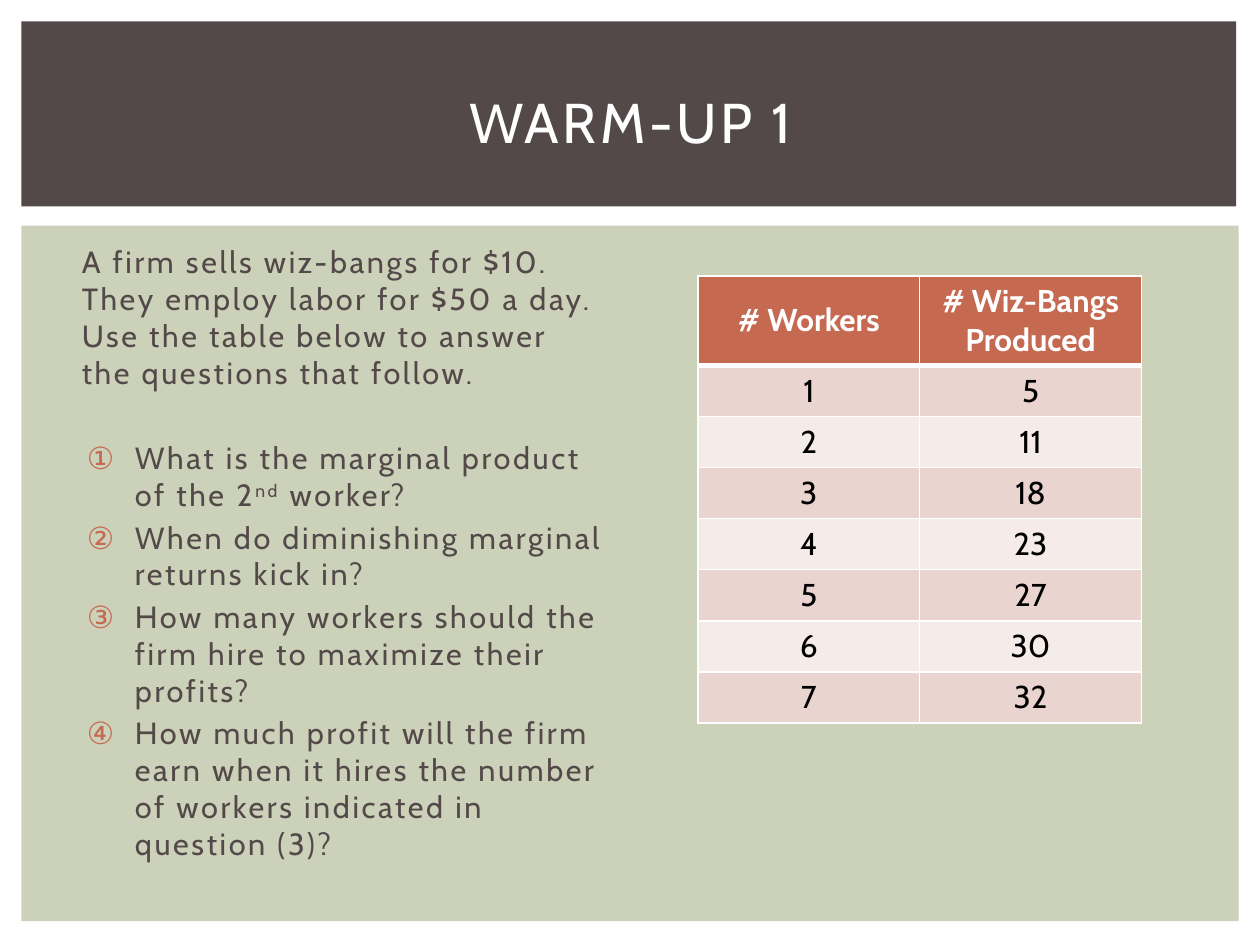
from dataclasses import dataclass

from lxml.etree import SubElement
from pptx import Presentation
from pptx.dml.color import RGBColor
from pptx.enum.shapes import MSO_SHAPE as Preset
from pptx.enum.text import MSO_ANCHOR as Anchor, MSO_AUTO_SIZE as AutoSize, PP_ALIGN as Align
from pptx.oxml import parse_xml
from pptx.oxml.ns import nsdecls, qn
from pptx.util import Cm, Pt

FONT = "Cabin"
BROWN, SAGE, RUST = "534949", "CCD1B9", "C66951"
WHITE, BLACK = "FFFFFF", "000000"
ROW_BANDS = ("EAD4D0", "F5EBE9")


@dataclass(frozen=True)
class Box:
    left: float
    top: float
    width: float
    height: float

    def lengths(self) -> tuple:
        return Cm(self.left), Cm(self.top), Cm(self.width), Cm(self.height)


@dataclass(frozen=True)
class TextStyle:
    size: float
    color: str
    bold: bool = False
    tracking: int = 0


@dataclass(frozen=True)
class Piece:
    text: str
    raised: bool = False


TITLE_STYLE = TextStyle(32, WHITE, tracking=200)
BODY_STYLE = TextStyle(17.5, BROWN, tracking=150)
HEADER_STYLE = TextStyle(18, WHITE, bold=True)
VALUE_STYLE = TextStyle(18, BLACK)

PANELS = (
    (Box(0.43, 4.55, 24.54, 14.02), SAGE),
    (Box(0.43, 0.43, 24.49, 3.73), BROWN),
)
INTRO = (
    "A firm sells wiz-bangs for $10. They employ labor for $50 a day. "
    "Use the table below to answer the questions that follow."
)
QUESTIONS = (
    (Piece("What is the marginal product of the 2"), Piece("nd", raised=True), Piece(" worker?")),
    (Piece("When do diminishing marginal returns kick in?"),),
    (Piece("How many workers should the firm hire to maximize their profits?"),),
    (Piece("How much profit will the firm earn when it hires the number "
           "of workers indicated in question (3)?"),),
)
HEADINGS = ("# Workers", "# Wiz-Bangs Produced")
OUTPUT = (5, 11, 18, 23, 27, 30, 32)


def rgb(color: str) -> RGBColor:
    return RGBColor.from_string(color)


def add_run(paragraph, piece: Piece, style: TextStyle) -> None:
    run = paragraph.add_run()
    run.text = piece.text
    run.font.name = FONT
    run.font.size = Pt(style.size)
    run.font.bold = style.bold
    run.font.color.rgb = rgb(style.color)
    properties = run.font._element
    if style.tracking:
        properties.set("spc", str(style.tracking))
    if piece.raised:
        properties.set("baseline", "30000")


def draw_panel(slide, box: Box, color: str) -> None:
    panel = slide.shapes.add_shape(Preset.RECTANGLE, *box.lengths())
    panel.shadow.inherit = False
    panel.fill.solid()
    panel.fill.fore_color.rgb = rgb(color)
    panel.line.fill.background()


def draw_title(slide, box: Box, text: str) -> None:
    title = slide.shapes.title
    title.left, title.top, title.width, title.height = box.lengths()
    title.element.getparent().append(title.element)
    frame = title.text_frame
    frame.auto_size = AutoSize.NONE
    frame.vertical_anchor = Anchor.MIDDLE
    heading = frame.paragraphs[0]
    heading.alignment = Align.CENTER
    add_run(heading, Piece(text), TITLE_STYLE)


def indent(paragraph, left: float, first: float = 0):
    properties = paragraph._p.get_or_add_pPr()
    properties.set("marL", str(Cm(left)))
    properties.set("indent", str(Cm(first)))
    return properties


def draw_questions(slide, box: Box) -> None:
    frame = slide.shapes.add_textbox(*box.lengths()).text_frame
    frame.word_wrap = True
    intro = frame.paragraphs[0]
    indent(intro, 0.13)
    add_run(intro, Piece(INTRO), BODY_STYLE)
    for position, pieces in enumerate(QUESTIONS):
        question = frame.add_paragraph()
        question.space_before = Pt(3.5 if position else 28)
        properties = indent(question, 1.2, -0.97)
        bullet_color = SubElement(properties, qn("a:buClr"))
        SubElement(bullet_color, qn("a:srgbClr")).set("val", RUST)
        SubElement(properties, qn("a:buAutoNum")).set("type", "circleNumWdBlackPlain")
        for piece in pieces:
            add_run(question, piece, BODY_STYLE)


def set_borders(cell, bottom: float, top: float) -> None:
    properties = cell._tc.get_or_add_tcPr()
    widths = {"lnL": 1, "lnR": 1, "lnT": top, "lnB": bottom}
    for position, (side, width) in enumerate(widths.items()):
        properties.insert(position, parse_xml(
            f'<a:{side} {nsdecls("a")} w="{Pt(width)}"><a:solidFill>'
            f'<a:srgbClr val="{WHITE}"/></a:solidFill></a:{side}>'
        ))


def draw_output_table(slide, box: Box, header_height: float) -> None:
    rows = [HEADINGS, *enumerate(OUTPUT, start=1)]
    table = slide.shapes.add_table(len(rows), len(HEADINGS), *box.lengths()).table
    value_height = (box.height - header_height) / len(OUTPUT)
    for row, values in enumerate(rows):
        table.rows[row].height = Cm(value_height if row else header_height)
        for column, value in enumerate(values):
            cell = table.cell(row, column)
            cell.vertical_anchor = Anchor.MIDDLE
            cell.fill.solid()
            cell.fill.fore_color.rgb = rgb(ROW_BANDS[(row - 1) % 2] if row else RUST)
            set_borders(cell, bottom=1 if row else 3, top=3 if row == 1 else 1)
            entry = cell.text_frame.paragraphs[0]
            entry.alignment = Align.CENTER
            add_run(entry, Piece(str(value)), VALUE_STYLE if row else HEADER_STYLE)


def main() -> None:
    deck = Presentation()
    deck.slide_width, deck.slide_height = Cm(25.4), Cm(19.05)
    slide = deck.slides.add_slide(deck.slide_layouts[5])
    for box, color in PANELS:
        draw_panel(slide, box, color)
    draw_questions(slide, Box(1.27, 4.78, 11.23, 12.24))
    draw_title(slide, Box(1.07, 0.99, 23.29, 2.92), "WARM-UP 1")
    draw_output_table(slide, Box(14.07, 5.56, 8.94, 9.01), header_height=1.8)
    deck.save("out.pptx")


if __name__ == "__main__":
    main()
